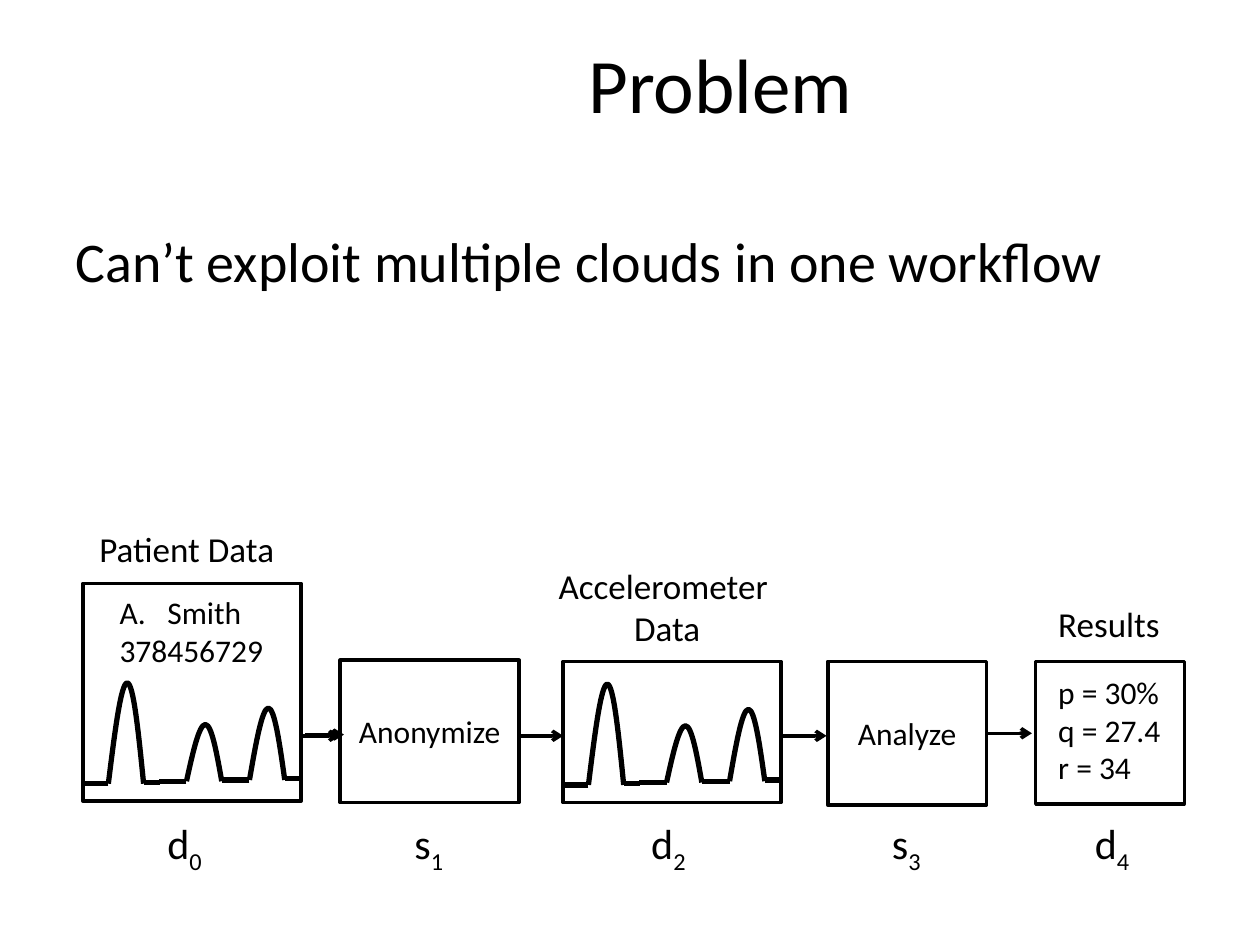
import lxml.etree
import pptx
import pptx.dml.color
import pptx.enum.shapes
import pptx.enum.text
import pptx.oxml.ns
import pptx.util

PX = 9144
BLACK = pptx.dml.color.RGBColor(0, 0, 0)
WHITE = pptx.dml.color.RGBColor(255, 255, 255)
FONT = "Calibri"
LEFT = pptx.enum.text.PP_ALIGN.LEFT
CENTER = pptx.enum.text.PP_ALIGN.CENTER
TOP = pptx.enum.text.MSO_ANCHOR.TOP
MIDDLE = pptx.enum.text.MSO_ANCHOR.MIDDLE
PEAKS = [(20, 80, 14), (82, 45, 16), (132, 57, 17)]
PEAK_WIDTH = 28
PEAK_CURVE = [(0, 1), (5, 0.5), (10, 0), (15, 0), (20, 0), (24, 0.5), (28, 1)]


def emu(*lengths):
    return [round(length * PX) for length in lengths]


def add_child(parent, tag, **attributes):
    return lxml.etree.SubElement(parent, pptx.oxml.ns.qn(tag), attributes)


def write(shape, lines, size, align=LEFT, anchor=TOP, wrap=True):
    frame = shape.text_frame
    frame.word_wrap = wrap
    frame.vertical_anchor = anchor
    frame.text = "\n".join(lines)
    for para in frame.paragraphs:
        para.alignment = align
        para.font.name = FONT
        para.font.size = pptx.util.Pt(size)
        para.font.color.rgb = BLACK
    return frame


def add_text(page, box, lines, size, **options):
    return write(page.shapes.add_textbox(*emu(*box)), lines, size, **options)


def add_label(page, box, lines, size, wrap=False, **options):
    frame = add_text(page, box, lines, size, wrap=wrap, **options)
    frame.auto_size = pptx.enum.text.MSO_AUTO_SIZE.SHAPE_TO_FIT_TEXT
    return frame


def indent(para, margin, first):
    properties = para._p.get_or_add_pPr()
    properties.set("marL", str(margin * PX))
    properties.set("indent", str(first * PX))
    return properties


def paint(shape, width):
    shape.shadow.inherit = False
    shape.fill.solid()
    shape.fill.fore_color.rgb = WHITE
    shape.line.color.rgb = BLACK
    shape.line.width = pptx.util.Pt(width)


def add_frame(page, box):
    frame = page.shapes.add_shape(pptx.enum.shapes.MSO_SHAPE.RECTANGLE, *emu(*box))
    paint(frame, 2)
    return frame


def add_line(page, start, end, width):
    line = page.shapes.add_connector(
        pptx.enum.shapes.MSO_CONNECTOR.STRAIGHT, *emu(*start, *end))
    line.line.color.rgb = BLACK
    line.line.width = pptx.util.Pt(width)
    add_child(line._element.spPr, "a:effectLst")
    return line


def add_arrow(page, start, end):
    arrow = add_line(page, start, end, 2)
    add_child(arrow.line._get_or_add_ln(), "a:tailEnd", type="arrow")
    return arrow


def bend(shape):
    segments = list(shape._element.iter(pptx.oxml.ns.qn("a:lnTo")))
    outline = segments[0].getparent()
    for first in range(0, len(segments), 3):
        curve = add_child(outline, "a:cubicBezTo")
        for segment in segments[first:first + 3]:
            curve.append(segment[0])
            outline.remove(segment)


def add_peak(page, left, base, height):
    points = [tuple(emu(left + x, base - height * (1 - y))) for x, y in PEAK_CURVE]
    builder = page.shapes.build_freeform(*points[0])
    builder.add_line_segments(points[1:], close=False)
    peak = builder.convert_to_shape()
    bend(peak)
    paint(peak, 3)
    right = left + PEAK_WIDTH
    add_line(page, (right, base - 1), (right + 13, base - 1), 3)
    add_line(page, (left, base), (left - 22, base), 3)


def add_signal(page, box):
    left, top, width, height = box
    add_frame(page, box)
    for offset, peak_height, lift in PEAKS:
        add_peak(page, left + offset, top + height - lift, peak_height)


def add_patient(page, box):
    left, top, width, height = box
    add_signal(page, box)
    record = add_label(page, (left + 19, top + 3, 135, 71), ["Smith", "378456729"], 18)
    properties = indent(record.paragraphs[0], 38, -38)
    properties.insert(0, add_child(properties, "a:buAutoNum", type="alphaUcPeriod"))
    title = add_label(page, (left - 8, top - 49, 189, 44), ["Patient Data"], 20, wrap=True)
    indent(title.paragraphs[0], 11, 0)


def add_accelerometer(page, box):
    left, top, width, height = box
    add_signal(page, box)
    add_label(page, (left - 15, top - 82, 195, 77), ["Accelerometer ", "Data"], 20,
              align=CENTER)


def add_service(page, box, name):
    service = add_frame(page, box)
    write(service, [name], 18, align=CENTER, anchor=MIDDLE)
    return service


def add_results(page, box):
    left, top, width, height = box
    add_frame(page, box)
    add_label(page, (left + 8, top + 4, 102, 101), ["p = 30%", "q = 27.4", "r = 34"], 18)
    add_label(page, (left + 8, top - 52, 102, 44), ["Results"], 20)


def add_symbol(page, box, letter, index):
    para = add_label(page, box, [letter], 24).paragraphs[0]
    span = para.add_run()
    span.text = str(index)
    span.font._element.set("baseline", "-25000")


def add_workflow(page, box):
    left, top, width, height = box
    add_patient(page, (left, top, 173, 173))
    add_accelerometer(page, (left + 381, top + 62, 173, 112))
    add_service(page, (left + 204, top + 61, 142, 113), "Anonymize")
    analyze = add_service(page, (left + 591, top + 62, 126, 114), "Analyze")
    add_results(page, (left + 756, top + 62, 118, 113))

    symbols = [("d", 57, 49), ("s", 253, 45), ("d", 441, 49), ("s", 632, 45), ("d", 793, 49)]
    for index, (letter, offset, symbol_width) in enumerate(symbols):
        add_symbol(page, (left + offset, top + 181, symbol_width, 50), letter, index)

    arrows = [(173, 204, 121), (345, 381, 121), (176, 207, 120), (554, 590, 121)]
    for start, end, drop in arrows:
        add_arrow(page, (left + start, top + drop), (left + end, top + drop))
    outcome = add_arrow(page, (left + 717, top + 119), (left + 753, top + 119))
    outcome.begin_connect(analyze, 3)


def main():
    deck = pptx.Presentation()
    deck.slide_width, deck.slide_height = emu(1000, 750)
    page = deck.slides.add_slide(deck.slide_layouts[6])
    add_text(page, (193, 3, 758, 125), ["Problem"], 44, align=CENTER, anchor=MIDDLE)
    add_text(page, (50, 175, 938, 495), ["Can’t exploit multiple clouds in one workflow"], 32)
    add_workflow(page, (66, 463, 874, 231))
    deck.save("out.pptx")


if __name__ == "__main__":
    main()
